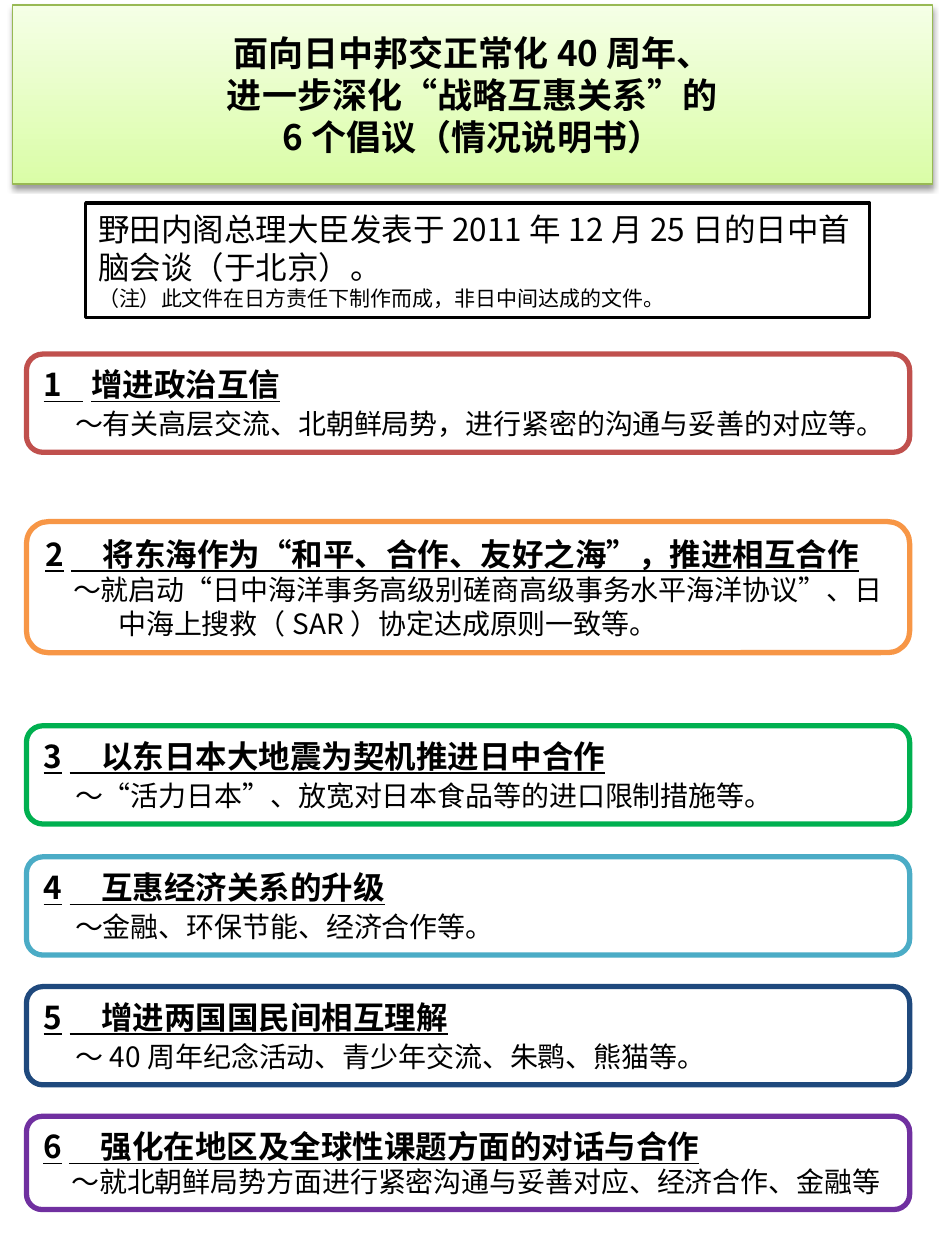
from lxml import etree
from pptx import Presentation
from pptx.dml.color import RGBColor
from pptx.enum.shapes import MSO_SHAPE as Shape
from pptx.enum.text import MSO_ANCHOR as Anchor, MSO_AUTO_SIZE as AutoSize, PP_ALIGN as Align
from pptx.oxml import parse_xml
from pptx.oxml.ns import nsdecls, qn
from pptx.util import Inches, Pt

SC, JP = "Noto Sans CJK SC", "Noto Sans CJK JP"
COLORS = {
    "text": "000000", "paper": "FFFFFF", "title_top": "F5FFE6",
    "title_bottom": "DAFDA7", "title_line": "98B954",
    "red": "C0504D", "orange": "F79646", "green": "00B050",
    "aqua": "4BACC6", "navy": "1F497D", "purple": "7030A0",
}
TITLE_LINES = [
    [("面向日中邦交正常化40周年、", SC)],
    [("进一步深化“战略互惠关系”的", SC)],
    [("6", JP), ("个倡议（情况说明书）", SC)],
]
INTRO = [
    ("野田内阁总理大臣发表于2011年12月25日的日中首脑会谈（于北京）。", 18),
    ("（注）此文件在日方责任下制作而成，非日中间达成的文件。", 12),
]
# colour, top, height, size of the leading space, hanging indent, heading, detail
INITIATIVES = [
    ("red", 2.81, 0.78, 18, False, "1   增进政治互信",
     "～有关高层交流、北朝鲜局势，进行紧密的沟通与妥善的对应等。"),
    ("orange", 4.14, 1.04, 16, True, "2　将东海作为“和平、合作、友好之海”，推进相互合作",
     "～就启动“日中海洋事务高级别磋商高级事务水平海洋协议”、日中海上搜救（SAR）协定达成原则一致等。"),
    ("green", 5.76, 0.78, 18, False, "3　以东日本大地震为契机推进日中合作",
     "～“活力日本”、放宽对日本食品等的进口限制措施等。"),
    ("aqua", 6.8, 0.78, 18, True, "4　互惠经济关系的升级", "～金融、环保节能、经济合作等。"),
    ("navy", 7.83, 0.78, 18, False, "5　增进两国国民间相互理解",
     "～40周年纪念活动、青少年交流、朱鹮、熊猫等。"),
    ("purple", 8.86, 0.74, 16, True, "6　强化在地区及全球性课题方面的对话与合作",
     "～就北朝鲜局势方面进行紧密沟通与妥善对应、经济合作、金融等"),
]
BOX_LEFT, BOX_WIDTH = 0.21, 7.01
HANG = Inches(0.58)
LINE_HEIGHT = 1.2


def color(name):
    return RGBColor.from_string(COLORS[name])


def add_run(paragraph, text, size, font=SC, bold=False, underline=False):
    run = paragraph.add_run()
    run.text = text
    run.font.name = font
    run.font.size = Pt(size)
    run.font.bold = bold
    run.font.underline = underline
    run.font.color.rgb = color("text")
    etree.SubElement(run.font._element, qn("a:ea"), typeface=font)


def format_paragraph(paragraph, size, align=Align.LEFT, hanging=False):
    paragraph.alignment = align
    paragraph.line_spacing = Pt(size * LINE_HEIGHT)
    if hanging:
        properties = paragraph._p.get_or_add_pPr()
        properties.set("marL", str(HANG))
        properties.set("indent", str(-HANG))


def prepare_frame(shape):
    frame = shape.text_frame
    frame.word_wrap = True
    frame.auto_size = AutoSize.NONE
    frame.vertical_anchor = Anchor.MIDDLE
    return frame


def add_box(slide, kind, left, top, width, height, line, weight):
    shape = slide.shapes.add_shape(
        kind, Inches(left), Inches(top), Inches(width), Inches(height))
    shape.shadow.inherit = False
    shape.fill.solid()
    shape.fill.fore_color.rgb = color("paper")
    shape.line.color.rgb = color(line)
    shape.line.width = Pt(weight)
    return prepare_frame(shape)


def add_title(slide):
    title = slide.shapes.title
    title.left, title.top = Inches(0.1), Inches(0.04)
    title.width, title.height = Inches(7.3), Inches(1.42)
    title._element.spPr.find(qn("a:xfrm")).addnext(parse_xml(
        f'<a:prstGeom {nsdecls("a")} prst="bevel"><a:avLst>'
        '<a:gd name="adj" fmla="val 99"/></a:avLst></a:prstGeom>'))
    title.fill.gradient()
    title.fill.gradient_angle = 270
    for stop, name in zip(title.fill.gradient_stops, ("title_top", "title_bottom")):
        stop.color.rgb = color(name)
    title.line.color.rgb = color("title_line")
    title.line.width = Pt(0.75)
    title.shadow.inherit = False
    title._element.spPr.find(qn("a:effectLst")).append(parse_xml(
        f'<a:outerShdw {nsdecls("a")} blurRad="40000" dist="23000" dir="5400000" rotWithShape="0">'
        '<a:srgbClr val="000000"><a:alpha val="38000"/></a:srgbClr></a:outerShdw>'))
    paragraph = prepare_frame(title).paragraphs[0]
    format_paragraph(paragraph, 20, Align.CENTER)
    for index, line in enumerate(TITLE_LINES):
        if index:
            paragraph.add_line_break()
        for text, font in line:
            add_run(paragraph, text, 20, font, bold=True)


def add_initiative(slide, line, top, height, lead_size, hanging, heading, detail):
    frame = add_box(slide, Shape.ROUNDED_RECTANGLE, BOX_LEFT, top, BOX_WIDTH, height, line, 3)
    first, second = frame.paragraphs[0], frame.add_paragraph()
    format_paragraph(first, 18, hanging=hanging)
    add_run(first, heading, 18, bold=True, underline=True)
    format_paragraph(second, lead_size, hanging=hanging)
    add_run(second, "　", lead_size)
    add_run(second, detail, 16)


def add_intro(slide):
    frame = add_box(slide, Shape.RECTANGLE, 0.68, 1.61, 6.22, 0.91, "text", 2)
    for index, (text, size) in enumerate(INTRO):
        paragraph = frame.add_paragraph() if index else frame.paragraphs[0]
        format_paragraph(paragraph, size)
        add_run(paragraph, text, size)


def main():
    presentation = Presentation()
    presentation.slide_width, presentation.slide_height = Inches(7.5), Inches(10)
    slide = presentation.slides.add_slide(presentation.slide_layouts[0])
    subtitle = slide.placeholders[1]._element
    subtitle.getparent().remove(subtitle)
    add_title(slide)
    for initiative in INITIATIVES:
        add_initiative(slide, *initiative)
    add_intro(slide)
    presentation.save("out.pptx")


if __name__ == "__main__":
    main()
